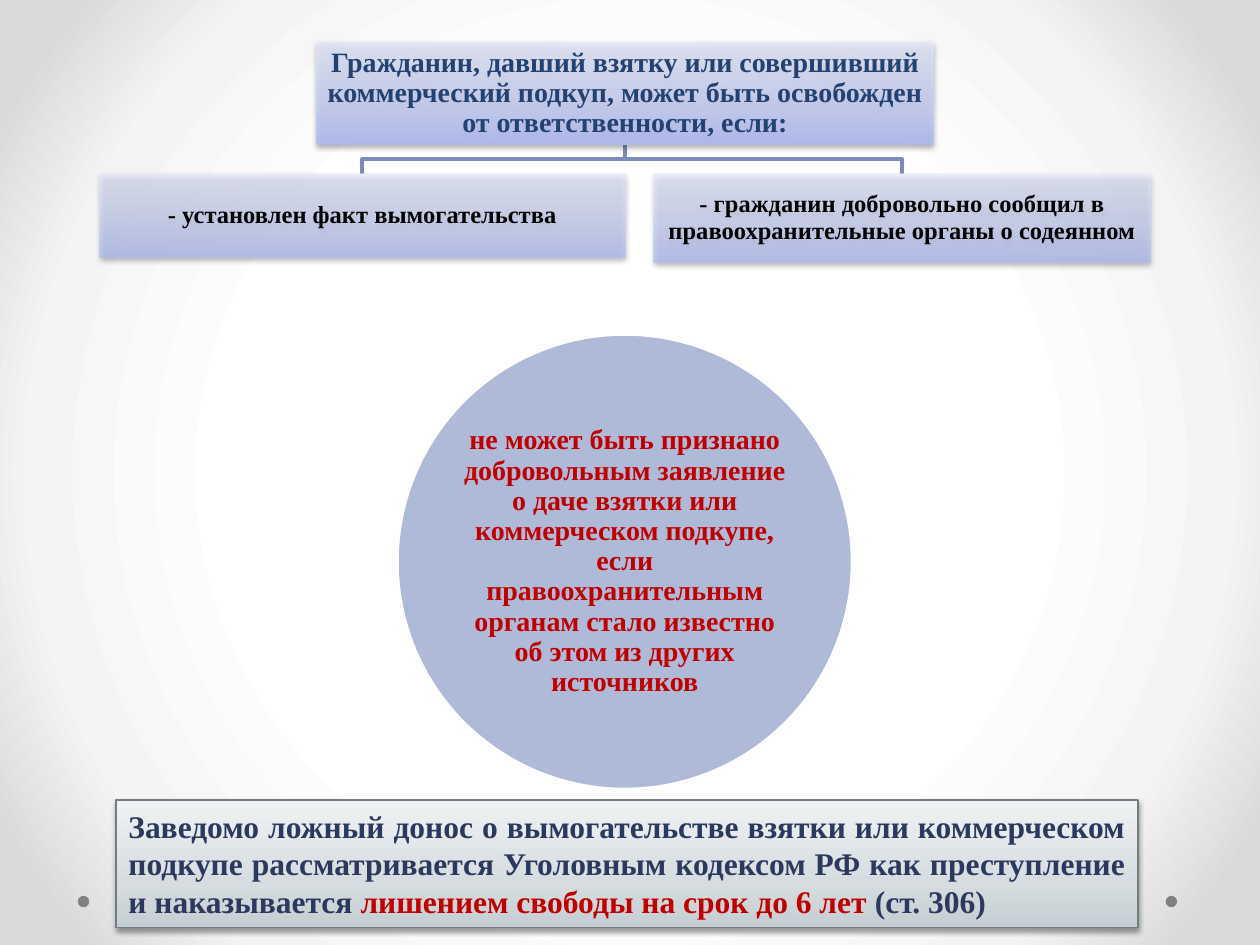
from lxml import etree
from pptx import Presentation
from pptx.dml.color import RGBColor
from pptx.enum.shapes import MSO_SHAPE
from pptx.enum.text import MSO_ANCHOR, PP_ALIGN
from pptx.oxml import parse_xml
from pptx.oxml.ns import nsdecls, qn
from pptx.util import Cm, Pt

RECT, OVAL = MSO_SHAPE.RECTANGLE, MSO_SHAPE.OVAL
CENTER, JUSTIFY = PP_ALIGN.CENTER, PP_ALIGN.JUSTIFY
TOP, MIDDLE = MSO_ANCHOR.TOP, MSO_ANCHOR.MIDDLE
FONT = "Times New Roman"
UPWARD = '<a:lin ang="16200000" scaled="0"/>'
FROM_CENTER = ('<a:path path="circle"><a:fillToRect l="50000" t="50000" '
               'r="50000" b="50000"/></a:path>')
BLUE_STOPS = [(0, "ADBBF6"), (35, "C5CFF8"), (100, "E8ECFD")]
GREY_STOPS = [(0, "C5CED2"), (35, "D6DCDF"), (100, "EFF2F3")]
PAGE_STOPS = [(50, "FFFFFF"), (76, "F4F4F4"), (92, "DADADA")]


def rgb(value):
    return RGBColor.from_string(value)


def set_gradient(fill, parent, stops, direction, opacity=100):
    """Put a gradient into parent, the element that holds fill."""
    fill.background()
    marks = "".join(
        f'<a:gs pos="{pos * 1000}"><a:srgbClr val="{color}">'
        f'<a:alpha val="{opacity * 1000}"/></a:srgbClr></a:gs>'
        for pos, color in stops)
    gradient = parse_xml(f'<a:gradFill {nsdecls("a")} rotWithShape="1">'
                         f'<a:gsLst>{marks}</a:gsLst>{direction}</a:gradFill>')
    parent.replace(parent.find(qn("a:noFill")), gradient)


def add_shadow(shape):
    effects = shape.element.spPr.find(qn("a:effectLst"))
    outer = etree.SubElement(effects, qn("a:outerShdw"), blurRad="39370",
                             dist="20320", dir="5400000", rotWithShape="0")
    black = etree.SubElement(outer, qn("a:srgbClr"), val="000000")
    etree.SubElement(black, qn("a:alpha"), val="38000")


def set_line(shape, color=None, width=0):
    if color:
        shape.line.color.rgb = rgb(color)
        shape.line.width = Pt(width)
    else:
        shape.line.fill.background()


def add_block(slide, kind, box, line=(), fill=None):
    shape = slide.shapes.add_shape(kind, *map(Cm, box))
    shape.shadow.inherit = False
    set_line(shape, *line)
    if fill:
        shape.fill.solid()
        shape.fill.fore_color.rgb = rgb(fill)
    return shape


def write(shape, runs, size, align=CENTER, anchor=MIDDLE, spacing=0.9, margins=(0.03, 0.03)):
    frame = shape.text_frame
    side, edge = map(Cm, margins)
    layout = {"word_wrap": True, "vertical_anchor": anchor,
              "margin_left": side, "margin_right": side,
              "margin_top": edge, "margin_bottom": edge}
    for name, value in layout.items():
        setattr(frame, name, value)
    paragraph = frame.paragraphs[0]
    paragraph.alignment = align
    paragraph.line_spacing = spacing
    for text, color in runs:
        run = paragraph.add_run()
        run.text = text
        for name, value in {"name": FONT, "size": Pt(size), "bold": True}.items():
            setattr(run.font, name, value)
        run.font.color.rgb = rgb(color)


def add_panel(slide, box, stops, opacity=100, line=()):
    panel = add_block(slide, RECT, box, line)
    set_gradient(panel.fill, panel.element.spPr, stops, UPWARD, opacity)
    add_shadow(panel)
    return panel


def add_backdrop(slide):
    fill = slide.background.fill
    fill.background()
    set_gradient(fill, slide.element.find(".//" + qn("p:bgPr")), PAGE_STOPS, FROM_CENTER)
    for left in (1.57, 23.5):
        add_block(slide, OVAL, (left, 18.06, 0.23, 0.23), fill="808080")


def add_conditions(slide, left, top, width):
    """Heading with one branch to each condition below it."""
    head_width, head_height, gap = 12.42, 2.06, 0.59
    center = left + width / 2
    head_bottom = top + head_height
    branch_top = head_bottom + gap
    right_width = 10.01
    conditions = [
        ("- установлен факт вымогательства", (left, branch_top, 10.59, 1.68)),
        ("- гражданин добровольно сообщил в правоохранительные органы о содеянном",
         (left + width - right_width, branch_top, right_width, 1.78)),
    ]

    # Branch lines
    bend = head_bottom + gap / 2
    for _, (x, _, w, _) in reversed(conditions):
        middle = x + w / 2
        builder = slide.shapes.build_freeform(Cm(center), Cm(head_bottom))
        corners = [(center, bend), (middle, bend), (middle, branch_top)]
        builder.add_line_segments([(Cm(px), Cm(py)) for px, py in corners], close=False)
        branch = builder.convert_to_shape()
        branch.fill.background()
        branch.shadow.inherit = False
        set_line(branch, "7D8CBD", 2.25)

    # Heading
    heading = add_panel(slide, (center - head_width / 2, top, head_width, head_height),
                        BLUE_STOPS, 80)
    write(heading, [("Гражданин, давший взятку или совершивший коммерческий подкуп, "
                     "может быть освобожден от ответственности, если:", "234271")], 16)

    # Conditions
    for text, box in conditions:
        write(add_panel(slide, box, BLUE_STOPS, 70), [(text, "000000")], 14)


def add_exception(slide, left, top, size):
    circle = add_block(slide, OVAL, (left, top, size, size), ("FFFFFF", 2.25), "6076B4")
    color = circle.element.spPr.find(qn("a:solidFill")).find(qn("a:srgbClr"))
    etree.SubElement(color, qn("a:alpha"), val="50000")
    write(circle, [("не может быть признано добровольным заявление о даче взятки или "
                    "коммерческом подкупе, если правоохранительным органам стало "
                    "известно об этом из других источников", "C00000")],
          16, margins=(0, 0))


def add_warning(slide, box):
    warning = add_panel(slide, box, GREY_STOPS, line=("727D82", 0.75))
    write(warning, [
        ("Заведомо ложный донос о вымогательстве взятки или коммерческом подкупе "
         "рассматривается Уголовным кодексом РФ как преступление и наказывается ", "2C395E"),
        ("лишением свободы на срок до 6 лет", "C00000"),
        (" (ст. 306)", "2C395E"),
    ], 18, JUSTIFY, TOP, 1.0, (0.25, 0.13))


def main():
    deck = Presentation()
    deck.slide_width, deck.slide_height = Cm(25.4), Cm(19.05)
    slide = deck.slides.add_slide(deck.slide_layouts[6])
    add_backdrop(slide)
    add_warning(slide, (2.34, 16.13, 20.6, 2.57))
    add_conditions(slide, 2.01, 0.86, 21.18)
    add_exception(slide, 8, 6.73, 9.19)
    deck.save("out.pptx")


if __name__ == "__main__":
    main()
